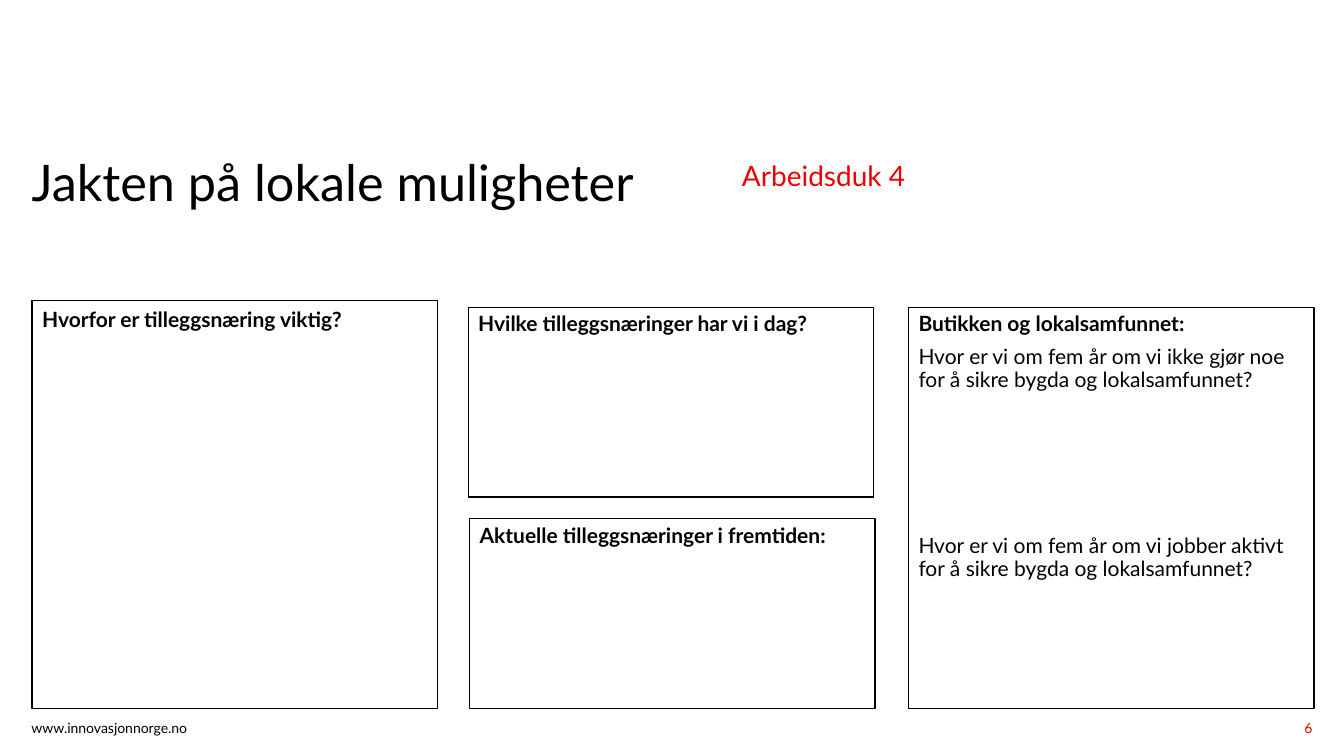
from dataclasses import dataclass

from pptx import Presentation
from pptx.dml.color import RGBColor
from pptx.enum.shapes import MSO_SHAPE
from pptx.enum.text import MSO_ANCHOR, MSO_AUTO_SIZE, PP_ALIGN
from pptx.util import Pt


@dataclass(frozen=True)
class Theme:
    font: str = "Lato"
    ink: RGBColor = RGBColor(0x00, 0x00, 0x00)
    accent: RGBColor = RGBColor(0xED, 0x00, 0x00)
    title_size: float = 36
    subtitle_size: float = 20
    body_size: float = 15
    footer_size: float = 10
    line_width: float = 1
    line_spacing: float = 0.9


THEME = Theme()

TITLE = "Jakten på lokale muligheter"
TITLE_AREA = (22.5, 113, 466, 101.5)

# text, area, size, colour, alignment
LABELS = [
    ("Arbeidsduk 4", (530, 116, 407.5, 101.5),
     THEME.subtitle_size, THEME.accent, PP_ALIGN.LEFT),
    ("www.innovasjonnorge.no", (22.5, 515, 205, 13.5),
     THEME.footer_size, THEME.ink, PP_ALIGN.LEFT),
    ("6", (859.5, 515, 78, 17),
     THEME.footer_size, THEME.accent, PP_ALIGN.RIGHT),
]

# left, top, inset above the heading, heading, questions with space before
PANEL_WIDTH = 289.5
PANELS_BOTTOM = 506
HALF_HEIGHT = 135.5
PANELS = [
    (23, 214.5, 6.5, "Hvorfor er tilleggsnæring viktig?", [], False),
    (334.5, 219.5, 4.5, "Hvilke tilleggsnæringer har vi i dag?", [], True),
    (335.5, PANELS_BOTTOM - HALF_HEIGHT, 4.5,
     "Aktuelle tilleggsnæringer i fremtiden:", [], True),
    (649, 219.5, 4.5, "Butikken og lokalsamfunnet:", [
        ("Hvor er vi om fem år om vi ikke gjør noe "
         "for å sikre bygda og lokalsamfunnet?", 7.5),
        ("Hvor er vi om fem år om vi jobber aktivt "
         "for å sikre bygda og lokalsamfunnet?", 102.5),
    ], False),
]


def prepare_frame(frame, side=0, top=0):
    settings = {
        "word_wrap": True,
        "auto_size": MSO_AUTO_SIZE.NONE,
        "vertical_anchor": MSO_ANCHOR.TOP,
        "margin_left": Pt(side),
        "margin_right": Pt(side),
        "margin_top": Pt(top),
        "margin_bottom": Pt(0),
    }
    for name, value in settings.items():
        setattr(frame, name, value)


def write(paragraph, text, size, color=THEME.ink, bold=False,
          align=PP_ALIGN.LEFT, before=0):
    paragraph.text = text
    formats = {
        paragraph: {"alignment": align, "space_before": Pt(before),
                    "line_spacing": THEME.line_spacing},
        paragraph.runs[0].font: {"name": THEME.font, "size": Pt(size),
                                 "bold": bold},
    }
    for target, settings in formats.items():
        for name, value in settings.items():
            setattr(target, name, value)
    paragraph.runs[0].font.color.rgb = color


def add_title(slide):
    title = slide.shapes.title
    for name, value in zip(("left", "top", "width", "height"), TITLE_AREA):
        setattr(title, name, Pt(value))
    prepare_frame(title.text_frame)
    write(title.text_frame.paragraphs[0], TITLE, THEME.title_size)


def add_label(slide, text, area, size, color, align):
    label = slide.shapes.add_textbox(*map(Pt, area))
    prepare_frame(label.text_frame)
    write(label.text_frame.paragraphs[0], text, size, color, align=align)


def add_panel(slide, left, top, inset, heading, questions, is_half):
    height = HALF_HEIGHT if is_half else PANELS_BOTTOM - top
    panel = slide.shapes.add_shape(
        MSO_SHAPE.RECTANGLE, *map(Pt, (left, top, PANEL_WIDTH, height)))
    panel.shadow.inherit = False
    panel.fill.background()
    panel.line.color.rgb = THEME.ink
    panel.line.width = Pt(THEME.line_width)

    frame = panel.text_frame
    prepare_frame(frame, side=7.2, top=inset)
    write(frame.paragraphs[0], heading, THEME.body_size, bold=True)
    for question, before in questions:
        write(frame.add_paragraph(), question, THEME.body_size, before=before)


def main():
    deck = Presentation()
    deck.slide_width, deck.slide_height = Pt(960), Pt(540)
    slide = deck.slides.add_slide(deck.slide_layouts.get_by_name("Title Only"))
    add_title(slide)
    for label in LABELS:
        add_label(slide, *label)
    for panel in PANELS:
        add_panel(slide, *panel)
    deck.save("out.pptx")


if __name__ == "__main__":
    main()
